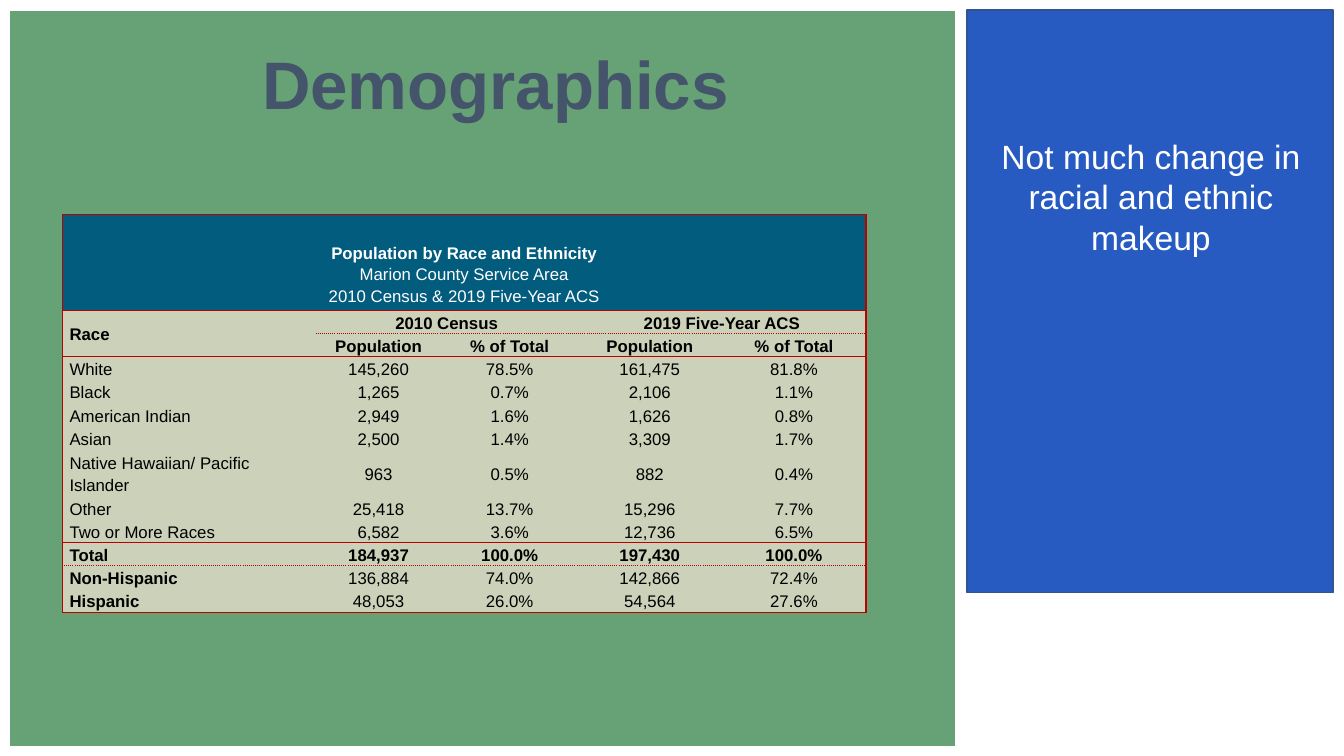
"""Build the demographics slide with its population table."""
from lxml.etree import SubElement
from pptx import Presentation
from pptx.dml.color import RGBColor
from pptx.enum.shapes import MSO_SHAPE
from pptx.enum.text import MSO_ANCHOR, PP_ALIGN
from pptx.oxml.ns import qn
from pptx.util import Inches, Pt

PANELS = [
    (0.09, 0.1, 9.39, 7.31, "67A176", "FFFFFF"),
    (9.59, 0.1, 3.63, 5.78, "285BC2", "325491"),
]
TEXTS = [
    ("Demographics", (0.28, 0.33, 9.27, 6.95), 0.09, 48, "44546A", True),
    ("Not much change in racial and ethnic makeup", (9.65, 1.3, 3.53, 1.31), 0.05, 24, "FFFFFF", False),
]
HEADING = "Population by Race and Ethnicity\nMarion County Service Area\n2010 Census & 2019 Five-Year ACS"
ROWS = [
    (HEADING, "", "", "", ""),
    ("Race", "2010 Census", "", "2019 Five-Year ACS", ""),
    ("", "Population", "% of Total", "Population", "% of Total"),
    ("White", "145,260", "78.5%", "161,475", "81.8%"),
    ("Black", "1,265", "0.7%", "2,106", "1.1%"),
    ("American Indian", "2,949", "1.6%", "1,626", "0.8%"),
    ("Asian", "2,500", "1.4%", "3,309", "1.7%"),
    ("Native Hawaiian/ Pacific Islander", "963", "0.5%", "882", "0.4%"),
    ("Other", "25,418", "13.7%", "15,296", "7.7%"),
    ("Two or More Races", "6,582", "3.6%", "12,736", "6.5%"),
    ("Total", "184,937", "100.0%", "197,430", "100.0%"),
    ("Non-Hispanic", "136,884", "74.0%", "142,866", "72.4%"),
    ("Hispanic", "48,053", "26.0%", "54,564", "27.6%"),
]
MERGES = [(0, 0, 0, 4), (1, 0, 2, 0), (1, 1, 1, 2), (1, 3, 1, 4)]
COLUMN_WIDTHS = [2.51, 1.25, 1.35, 1.43, 1.43]
ROW_HEIGHT = 0.23
SPECIAL_HEIGHTS = {0: 0.95, 7: 2 * ROW_HEIGHT}
BOLD_ROWS = (1, 2, 10)
BOLD_LABEL_ROWS = (11, 12)
SOLID, THICK, DOTTED = (1, "solid"), (1.5, "solid"), (1, "sysDot")
RULES = {0: SOLID, 1: SOLID, 2: DOTTED, 3: SOLID, 10: THICK, 11: DOTTED, 13: SOLID}


def color(value):
    return RGBColor.from_string(value)


def style_font(para, size, value, bold):
    for span in para.runs:
        span.font.name = "Arial"
        span.font.size = Pt(size)
        span.font.bold = bold
        span.font.color.rgb = color(value)


def add_border(cell, side, rule):
    width, dash = rule or (1, None)
    line = SubElement(cell._tc.get_or_add_tcPr(), qn(f"a:ln{side}"), w=str(Pt(width)))
    if rule is None:
        SubElement(line, qn("a:noFill"))
    else:
        fill = SubElement(line, qn("a:solidFill"))
        SubElement(fill, qn("a:srgbClr"), val="BB0000")
        SubElement(line, qn("a:prstDash"), val=dash)


def format_cell(cell, row, column):
    bottom = row + (cell.span_height if cell.is_merge_origin else 1)
    right = column + (cell.span_width if cell.is_merge_origin else 1)
    add_border(cell, "L", SOLID if column == 0 else None)
    add_border(cell, "R", SOLID if right == len(COLUMN_WIDTHS) else None)
    add_border(cell, "T", None if (row, column) == (2, 0) else RULES.get(row))
    add_border(cell, "B", RULES.get(bottom))
    cell.fill.solid()
    cell.fill.fore_color.rgb = color("CCD1B9" if row else "025C7E")
    cell.vertical_anchor = MSO_ANCHOR.MIDDLE
    cell.margin_left = cell.margin_right = Inches(0.07)
    cell.margin_top = Inches(0 if row else 0.22)
    cell.margin_bottom = 0
    for index, para in enumerate(cell.text_frame.paragraphs):
        bold = row in BOLD_ROWS or (column == 0 and row in BOLD_LABEL_ROWS) or (row == 0 and index == 0)
        para.alignment = PP_ALIGN.LEFT if row and column == 0 else PP_ALIGN.CENTER
        para.line_spacing = 1.15
        para.font.size = Pt(12)
        style_font(para, 12, "000000" if row else "FFFFFF", bold)


def add_population_table(page):
    heights = [SPECIAL_HEIGHTS.get(row, ROW_HEIGHT) for row in range(len(ROWS))]
    frame = page.shapes.add_table(
        len(ROWS), len(COLUMN_WIDTHS), Inches(0.62), Inches(2.13),
        Inches(sum(COLUMN_WIDTHS)), Inches(sum(heights)))
    table = frame.table
    table.first_row = table.horz_banding = False
    for column, width in zip(table.columns, COLUMN_WIDTHS):
        column.width = Inches(width)
    for row, height in zip(table.rows, heights):
        row.height = Inches(height)
    for top, left, bottom, right in MERGES:
        table.cell(top, left).merge(table.cell(bottom, right))
    for row, values in enumerate(ROWS):
        for column, value in enumerate(values):
            cell = table.cell(row, column)
            if value:
                cell.text_frame.text = value
            format_cell(cell, row, column)


def main():
    deck = Presentation()
    deck.slide_width, deck.slide_height = Inches(13.33), Inches(7.5)
    page = deck.slides.add_slide(deck.slide_layouts[6])
    for left, top, width, height, fill, outline in PANELS:
        panel = page.shapes.add_shape(
            MSO_SHAPE.RECTANGLE, Inches(left), Inches(top), Inches(width), Inches(height))
        panel.shadow.inherit = False
        panel.fill.solid()
        panel.fill.fore_color.rgb = color(fill)
        panel.line.color.rgb = color(outline)
        panel.line.width = Pt(1)
    for text, place, margin, size, value, bold in TEXTS:
        box = page.shapes.add_textbox(*map(Inches, place))
        box.text_frame.word_wrap = True
        box.text_frame.margin_top = Inches(margin)
        box.text_frame.text = text
        para = box.text_frame.paragraphs[0]
        para.alignment = PP_ALIGN.CENTER
        style_font(para, size, value, bold)
    add_population_table(page)
    deck.save("out.pptx")


if __name__ == "__main__":
    main()
